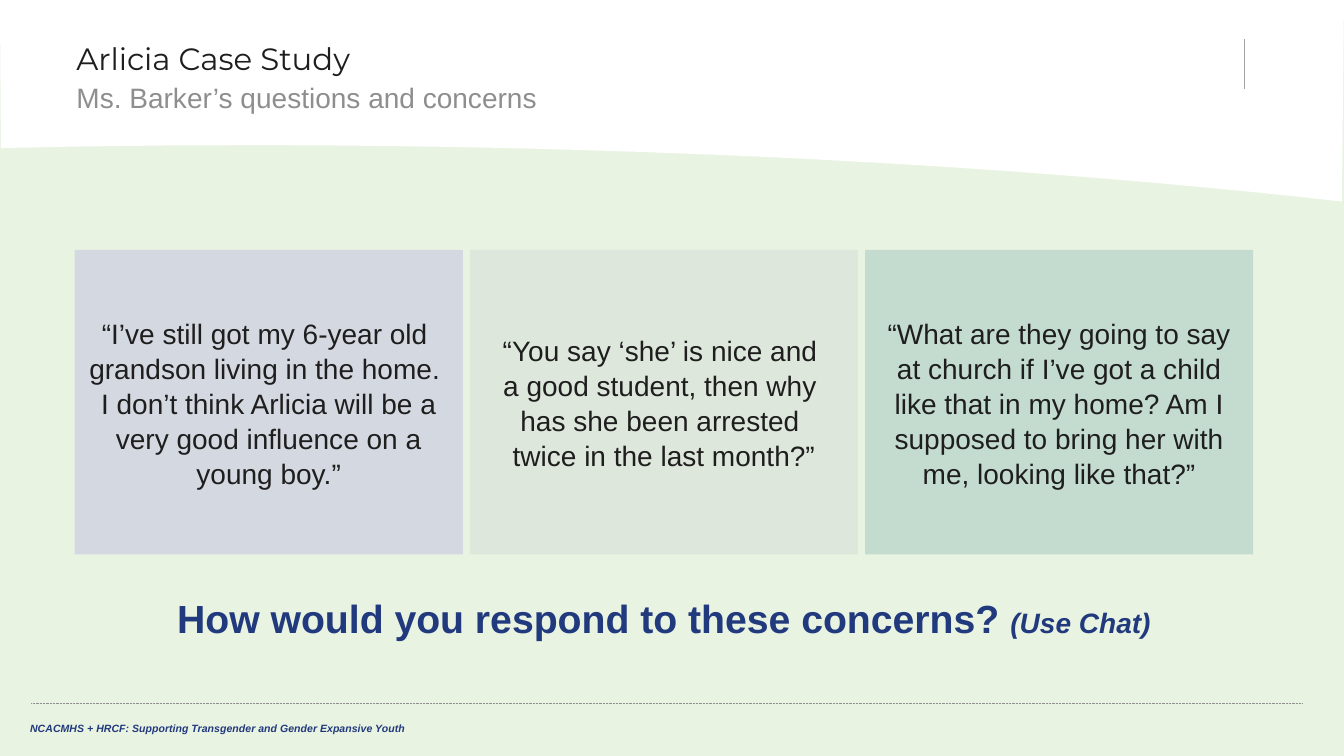
from lxml import etree
from pptx import Presentation
from pptx.dml.color import RGBColor
from pptx.enum.dml import MSO_LINE
from pptx.enum.shapes import MSO_CONNECTOR, MSO_SHAPE
from pptx.enum.text import MSO_ANCHOR, PP_ALIGN
from pptx.oxml.ns import qn
from pptx.util import Inches, Pt

PALE_GREEN = RGBColor(0xE9, 0xF3, 0xE2)
WHITE = RGBColor(0xFF, 0xFF, 0xFF)
INK = RGBColor(0x1E, 0x1E, 0x1E)
NAVY = RGBColor(0x21, 0x39, 0x7D)
GRAY = RGBColor(0x8E, 0x8E, 0x8E)
LIGHT_GRAY = RGBColor(0xA5, 0xA5, 0xA5)
LAVENDER = RGBColor(0xD4, 0xD8, 0xE1)
SAGE = RGBColor(0xDE, 0xE7, 0xDB)
MINT = RGBColor(0xC4, 0xDB, 0xCF)

QUOTES = [
    (LAVENDER, "“I’ve still got my 6-year old \ngrandson living in the home. \n"
               "I don’t think Arlicia will be a very good influence on a young boy.”"),
    (SAGE, "“You say ‘she’ is nice and \na good student, then why \n"
           "has she been arrested \ntwice in the last month?”"),
    (MINT, "“What are they going to say at church if I’ve got a child like that "
           "in my home? Am I supposed to bring her with me, looking like that?”"),
]


def add_run(p, text, size, color, font="Arial", bold=False, italic=False):
    """Add formatted text; each newline becomes a line break."""
    for i, line in enumerate(text.split("\n")):
        if i:
            p.add_line_break()
        r = p.add_run()
        r.text = line
        r.font.name, r.font.size = font, Pt(size)
        r.font.bold, r.font.italic = bold, italic
        r.font.color.rgb = color


def set_frame(tf, inset_x=0.1, inset_y=0.05, anchor=MSO_ANCHOR.TOP,
              align=PP_ALIGN.LEFT, spacing=1.0):
    """Set up a text frame and return its first paragraph."""
    tf.word_wrap = True
    tf.margin_left = tf.margin_right = Inches(inset_x)
    tf.margin_top = tf.margin_bottom = Inches(inset_y)
    tf.vertical_anchor = anchor
    p = tf.paragraphs[0]
    p.alignment, p.line_spacing = align, spacing
    return p


def add_text(s, left, top, width, height, **frame):
    box = s.shapes.add_textbox(*map(Inches, (left, top, width, height)))
    return set_frame(box.text_frame, **frame)


def add_line(s, x1, y1, x2, y2, color, dash=None):
    line = s.shapes.add_connector(MSO_CONNECTOR.STRAIGHT, *map(Inches, (x1, y1, x2, y2)))
    line.line.color.rgb, line.line.width = color, Pt(0.5)
    if dash:
        line.line.dash_style = dash
    etree.SubElement(line._element.spPr, qn("a:effectLst"))


def bezier(p0, p1, p2, p3, steps=40):
    """Points along a cubic curve, after its start."""
    for i in range(1, steps + 1):
        t = i / steps
        u = 1 - t
        yield tuple(u**3 * a + 3 * u * u * t * b + 3 * u * t * t * c + t**3 * d
                    for a, b, c, d in zip(p0, p1, p2, p3))


def add_header(s, left, top, width, height):
    # White band with a curved lower edge
    right, bottom = left + width, top + height
    start = (right - 0.02, bottom)
    edge = bezier(start, (left + 7.62, top + 1.36), (left + 2.07, top + 1.42),
                  (left + 0.01, top + 1.47))
    outline = s.shapes.build_freeform(Inches(left), Inches(top), scale=Inches(1) / 1000)
    outline = s.shapes.build_freeform(left * 1000, top * 1000, scale=Inches(1) / 1000)
    points = [(right, top), start, *edge]
    outline.add_line_segments([(x * 1000, y * 1000) for x, y in points], close=True)
    band = outline.convert_to_shape()
    band.fill.solid()
    band.fill.fore_color.rgb = WHITE
    band.line.fill.background()
    band.shadow.inherit = False

    # Title, subtitle and divider
    p = add_text(s, left + 0.66, top + 0.41, 11.31, 0.39,
                 anchor=MSO_ANCHOR.MIDDLE, spacing=0.9)
    add_run(p, "Arlicia Case Study", 22, INK, font="Montserrat")
    p = add_text(s, left + 0.66, top + 0.79, 7.22, 0.39, spacing=0.9)
    add_run(p, "Ms. Barker’s questions and concerns", 20, GRAY)
    add_line(s, right - 0.99, top + 0.88, right - 0.99, top + 0.39, LIGHT_GRAY)


def add_quotes(s, left, top, width, height, gap=0.07):
    card_w = (width - gap * (len(QUOTES) - 1)) / len(QUOTES)
    for i, (color, quote) in enumerate(QUOTES):
        x = left + i * (card_w + gap)
        card = s.shapes.add_shape(MSO_SHAPE.RECTANGLE,
                                  *map(Inches, (x, top, card_w, height)))
        card.fill.solid()
        card.fill.fore_color.rgb = color
        card.line.fill.background()
        card.shadow.inherit = False
        p = set_frame(card.text_frame, 0.12, 0.02, MSO_ANCHOR.MIDDLE,
                      PP_ALIGN.CENTER, Pt(25))
        add_run(p, quote, 20, INK)


def add_question(s, left, top, width, height):
    p = add_text(s, left, top, width, height, inset_x=0.23, inset_y=0.23,
                 anchor=MSO_ANCHOR.MIDDLE, align=PP_ALIGN.CENTER, spacing=0.9)
    add_run(p, "How would you respond to these concerns? ", 28, NAVY, bold=True)
    add_run(p, "(Use Chat)", 20, NAVY, bold=True, italic=True)


def add_footer(s, left, top, width):
    add_line(s, left, top, left + width, top, GRAY, MSO_LINE.ROUND_DOT)
    p = add_text(s, left - 0.11, top + 0.13, 6.72, 0.23)
    add_run(p, "NCACMHS + HRCF: Supporting Transgender and Gender Expansive Youth",
            7.5, NAVY, bold=True, italic=True)


def main():
    prs = Presentation()
    prs.slide_width, prs.slide_height = Inches(13.33), Inches(7.5)
    s = prs.slides.add_slide(prs.slide_layouts[6])
    s.background.fill.solid()
    s.background.fill.fore_color.rgb = PALE_GREEN
    add_header(s, 0, 0, 13.33, 2)
    add_footer(s, 0.31, 6.98, 12.6)
    add_question(s, 0.73, 5.72, 11.71, 0.88)
    add_quotes(s, 0.74, 2.48, 11.69, 3.02)
    prs.save("out.pptx")


if __name__ == "__main__":
    main()
